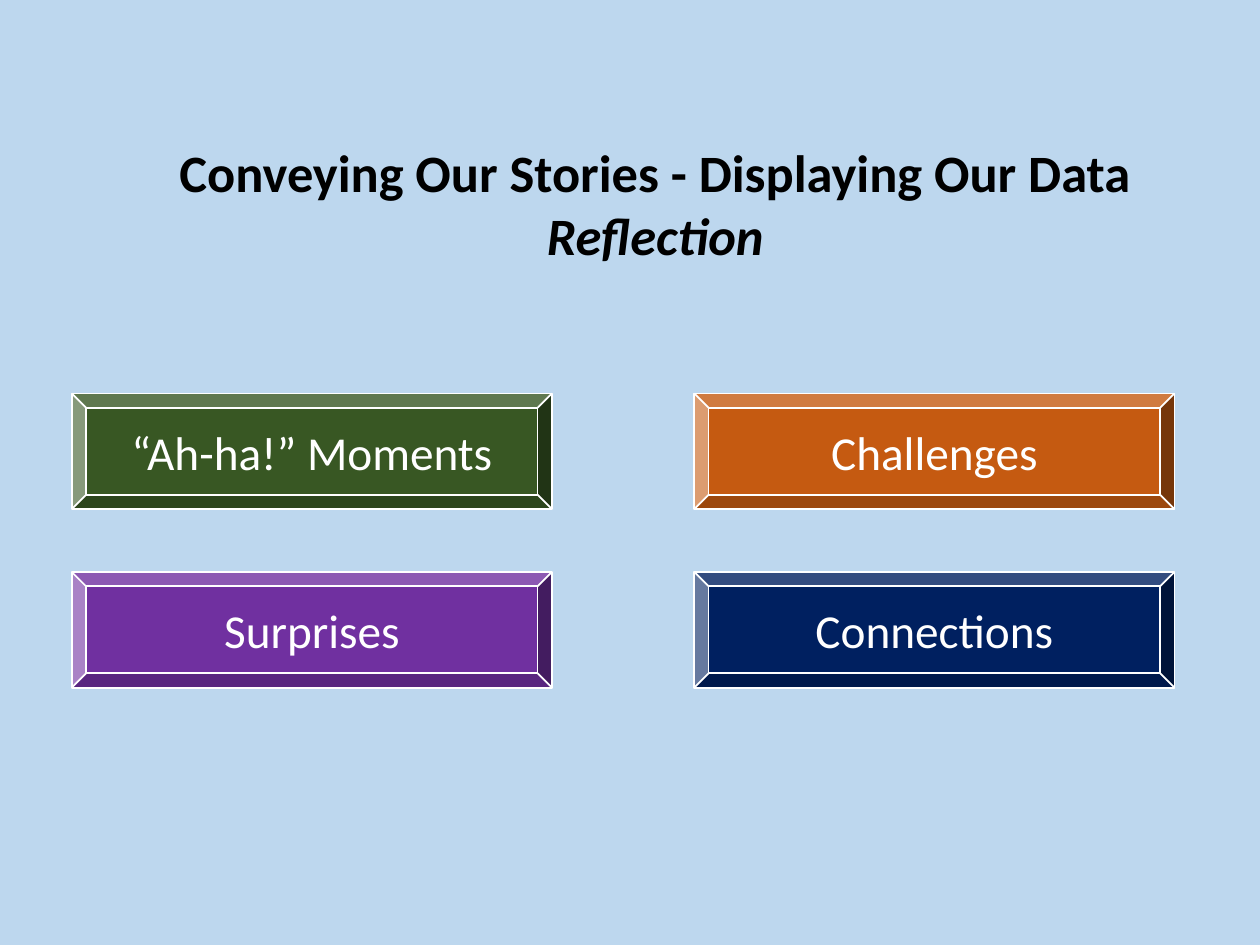
import pptx
import pptx.util
import pptx.dml.color
import pptx.enum.shapes
import pptx.enum.text

Pt = pptx.util.Pt
RGB = pptx.dml.color.RGBColor.from_string
CENTER = pptx.enum.text.PP_ALIGN.CENTER
MIDDLE = pptx.enum.text.MSO_ANCHOR.MIDDLE
BEVEL = pptx.enum.shapes.MSO_SHAPE.BEVEL

COLORS = {
    "background": "BDD7EE",
    "title": "000000",
    "white": "FFFFFF",
    "green": "385723",
    "orange": "C55A11",
    "purple": "7030A0",
    "navy": "002060",
}


def style_paragraph(paragraph, size, color):
    paragraph.alignment = CENTER
    paragraph.font.name = "Calibri"
    paragraph.font.size = Pt(size)
    paragraph.font.color.rgb = RGB(COLORS[color])


presentation = pptx.Presentation()
presentation.slide_width = Pt(720)
presentation.slide_height = Pt(540)
slide = presentation.slides.add_slide(presentation.slide_layouts[6])
slide.background.fill.solid()
slide.background.fill.fore_color.rgb = RGB(COLORS["background"])

topics = [
    [("“Ah-ha!” Moments", "green"), ("Challenges", "orange")],
    [("Surprises", "purple"), ("Connections", "navy")],
]
for row, row_topics in enumerate(topics):
    for column, (topic, color) in enumerate(row_topics):
        button = slide.shapes.add_shape(
            BEVEL,
            Pt(41 + 355.7 * column), Pt(224.8 + 102 * row),
            Pt(274.5), Pt(66.2),
        )
        button.shadow.inherit = False
        button.fill.solid()
        button.fill.fore_color.rgb = RGB(COLORS[color])
        button.line.color.rgb = RGB(COLORS["white"])
        button.line.width = Pt(1)
        button.text_frame.vertical_anchor = MIDDLE
        button.text_frame.text = topic
        style_paragraph(button.text_frame.paragraphs[0], 27, "white")

title = slide.shapes.add_textbox(Pt(92), Pt(76.5), Pt(565), Pt(80)).text_frame
title.word_wrap = True
heading = title.paragraphs[0]
style_paragraph(heading, 30, "title")
heading.font.bold = True
heading.add_run().text = "Conveying Our Stories - Displaying Our Data "
reflection = heading.add_run()
reflection.text = "Reflection"
reflection.font.italic = True

presentation.save("out.pptx")
